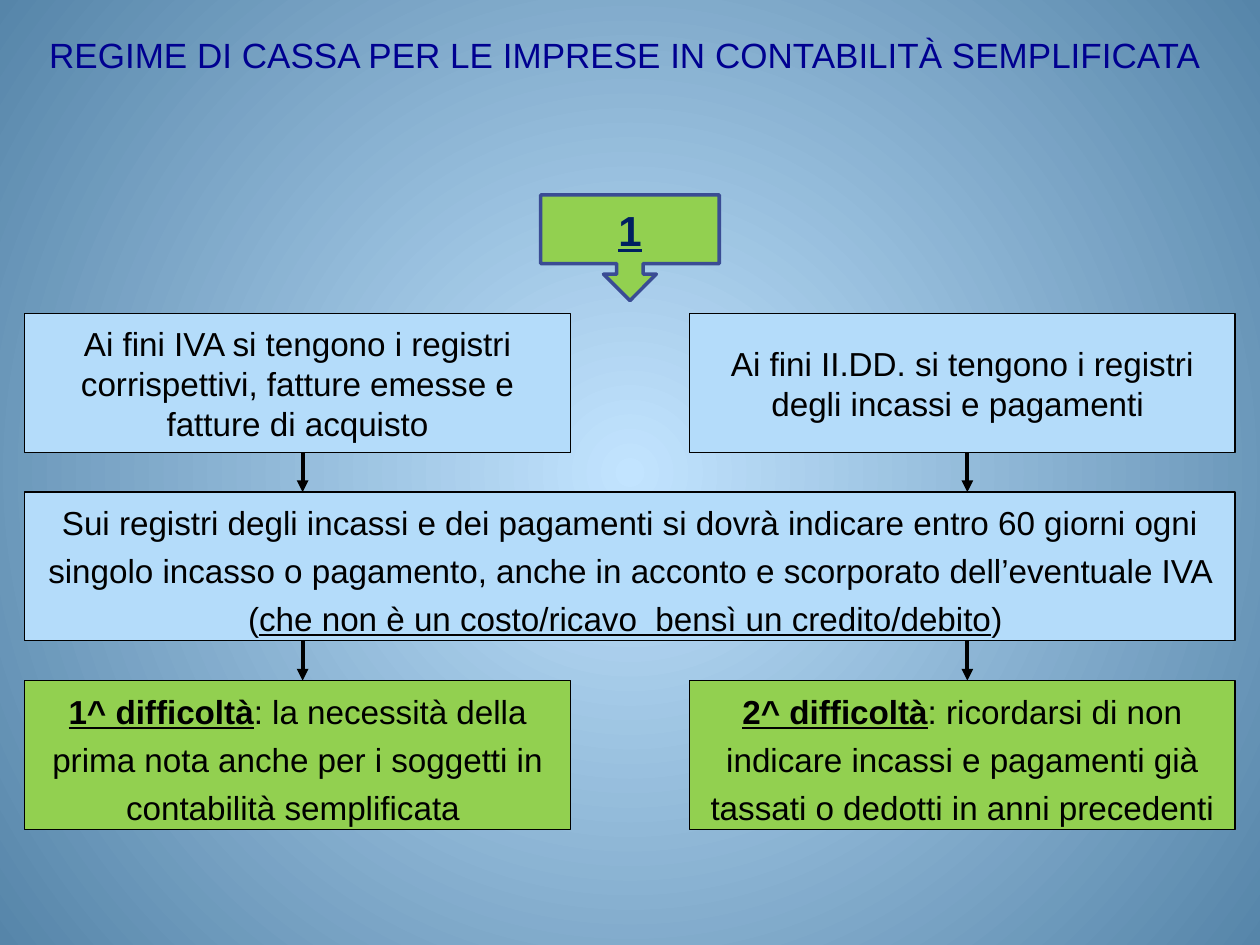
from pptx import Presentation
from pptx.dml.color import RGBColor
from pptx.enum import shapes, text
from pptx.oxml import ns, parse_xml
from pptx.util import Cm, Pt

BLACK = RGBColor(0x00, 0x00, 0x00)
NAVY = RGBColor(0x00, 0x20, 0x60)
TITLE_BLUE = RGBColor(0x00, 0x00, 0x90)
OUTLINE_BLUE = RGBColor(0x3A, 0x4C, 0x94)
PALE_BLUE = RGBColor(0xB4, 0xDC, 0xFA)
GREEN = RGBColor(0x92, 0xD0, 0x50)
GLOW = RGBColor(0xC2, 0xE4, 0xFF)
EDGE = RGBColor(0x56, 0x85, 0xA9)

LEFT, RIGHT = 0.5, 13.9
HALF, FULL = 11, 24.4
GAP = 0.8
REGISTERS_TOP, REGISTERS_HEIGHT = 6.32, 2.8
RULE_TOP = REGISTERS_TOP + REGISTERS_HEIGHT + GAP
RULE_HEIGHT = 3
DIFFICULTY_TOP = RULE_TOP + RULE_HEIGHT + GAP


def write(frame, runs, size, color):
    frame.word_wrap = True
    frame.vertical_anchor = text.MSO_ANCHOR.MIDDLE
    paragraph = frame.paragraphs[0]
    paragraph.alignment = text.PP_ALIGN.CENTER
    paragraph.font.name = "Arial"
    paragraph.font.size = Pt(size)
    paragraph.font.color.rgb = color
    for wording, bold, underline in runs:
        run = paragraph.add_run()
        run.text = wording
        run.font.bold = bold
        run.font.underline = underline
    return paragraph


def add_panel(kind, left, top, width, height, fill, line, weight):
    panel = slide.shapes.add_shape(kind, Cm(left), Cm(top), Cm(width), Cm(height))
    panel.shadow.inherit = False
    panel.fill.solid()
    panel.fill.fore_color.rgb = fill
    panel.line.color.rgb = line
    panel.line.width = Pt(weight)
    return panel.text_frame


deck = Presentation()
deck.slide_width, deck.slide_height = Cm(25.4), Cm(19.05)
slide = deck.slides.add_slide(deck.slide_layouts[6])

backdrop = slide.background.fill
backdrop.gradient()
for stop, color in zip(backdrop.gradient_stops, (GLOW, EDGE)):
    stop.color.rgb = color
gradient = slide.element.find(".//" + ns.qn("a:gradFill"))
gradient.replace(gradient.find(ns.qn("a:lin")), parse_xml(
    f'<a:path {ns.nsdecls("a")} path="circle">'
    '<a:fillToRect l="50000" t="50000" r="50000" b="50000"/></a:path>'))

title = slide.shapes.add_textbox(Cm(0.3), Cm(0.5), Cm(24.6), Cm(1.2))
heading = write(title.text_frame, [
    ("REGIME DI CASSA PER LE IMPRESE IN CONTABILITÀ SEMPLIFICATA", False, False),
], 20, TITLE_BLUE)
indent = Cm(0.95)
heading_properties = heading._p.get_or_add_pPr()
heading_properties.set("marL", str(indent))
heading_properties.set("indent", str(-indent))

number = add_panel(shapes.MSO_SHAPE.DOWN_ARROW_CALLOUT, 10.9, 3.93, 3.6, 2.13,
                   GREEN, OUTLINE_BLUE, 2)
write(number, [("1", True, True)], 24, NAVY)

steps = [
    (LEFT, REGISTERS_TOP, HALF, REGISTERS_HEIGHT, PALE_BLUE, 1, [
        ("Ai fini IVA si tengono i registri corrispettivi, fatture emesse e "
         "fatture di acquisto", False, False)]),
    (RIGHT, REGISTERS_TOP, HALF, REGISTERS_HEIGHT, PALE_BLUE, 1, [
        ("Ai fini II.DD. si tengono i registri degli incassi e pagamenti ", False, False)]),
    (LEFT, RULE_TOP, FULL, RULE_HEIGHT, PALE_BLUE, 1.2, [
        ("Sui registri degli incassi e dei pagamenti si dovrà indicare entro 60 giorni "
         "ogni singolo incasso o pagamento, anche in acconto e scorporato "
         "dell’eventuale IVA (", False, False),
        ("che non è un costo/ricavo  bensì un credito/debito", False, True),
        (") ", False, False)]),
    (LEFT, DIFFICULTY_TOP, HALF, RULE_HEIGHT, GREEN, 1.2, [
        ("1^ difficoltà", True, True),
        (": la necessità della prima nota anche per i soggetti in "
         "contabilità semplificata ", False, False)]),
    (RIGHT, DIFFICULTY_TOP, HALF, RULE_HEIGHT, GREEN, 1.2, [
        ("2^ difficoltà", True, True),
        (": ricordarsi di non indicare incassi e pagamenti già tassati o "
         "dedotti in anni precedenti", False, False)]),
]
for left, top, width, height, fill, spacing, runs in steps:
    step = add_panel(shapes.MSO_SHAPE.RECTANGLE, left, top, width, height,
                     fill, BLACK, 0.75)
    write(step, runs, 19, BLACK).line_spacing = spacing

for bottom in (RULE_TOP, DIFFICULTY_TOP):
    for x in (6.1, 19.5):
        arrow = slide.shapes.add_connector(
            shapes.MSO_CONNECTOR.STRAIGHT, Cm(x), Cm(bottom - GAP), Cm(x), Cm(bottom))
        arrow.line.color.rgb = BLACK
        arrow.line.width = Pt(2.25)
        arrow.line._get_or_add_ln().append(
            parse_xml(f'<a:tailEnd {ns.nsdecls("a")} type="triangle"/>'))
        arrow._element.spPr.append(parse_xml(f'<a:effectLst {ns.nsdecls("a")}/>'))

deck.save("out.pptx")
